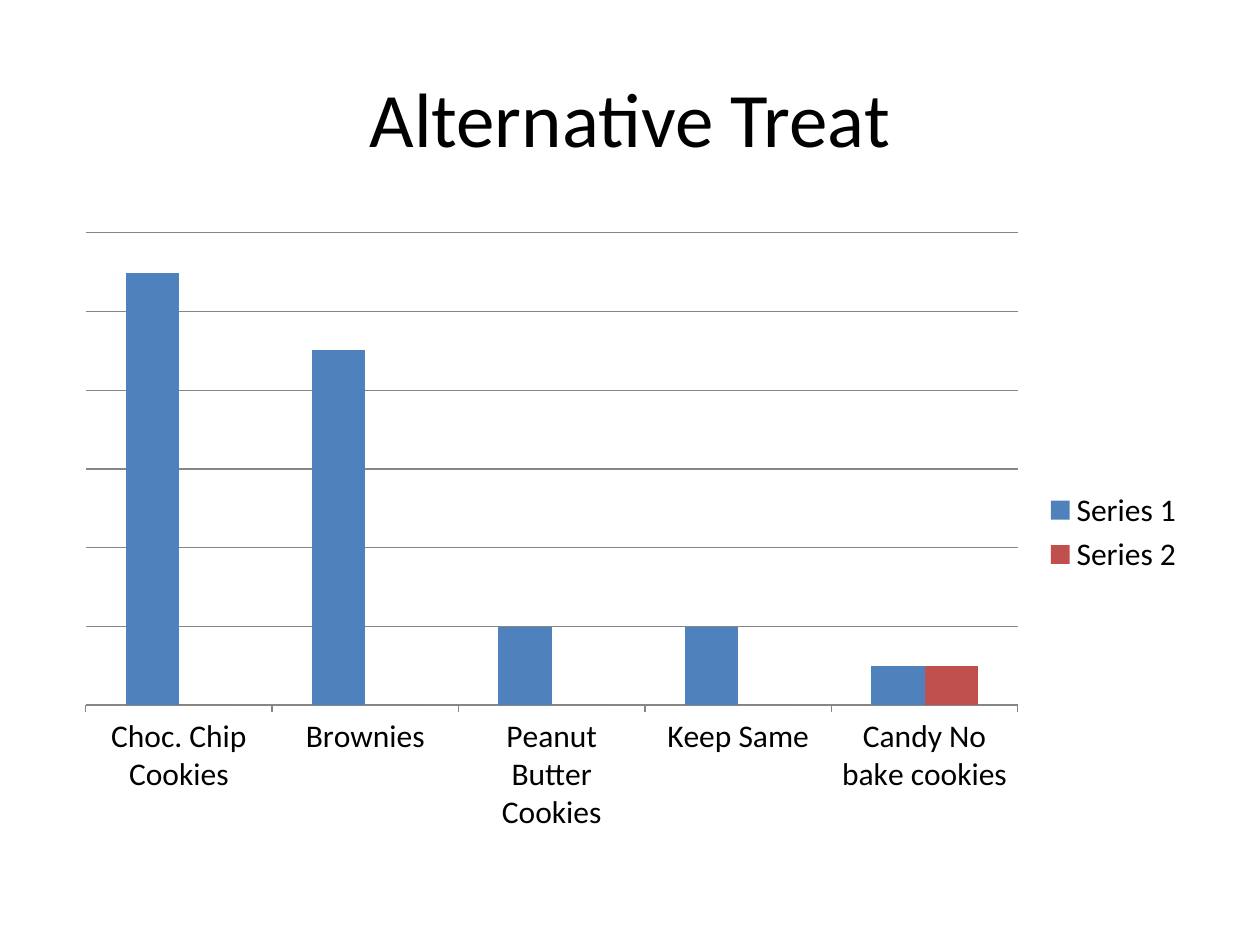
from dataclasses import dataclass

from pptx import Presentation
from pptx import util as u
from pptx.chart import data as cd
from pptx.dml.color import RGBColor
from pptx.enum import chart as ce
from pptx.enum import text as te


@dataclass(frozen=True)
class Theme:
    face: str = "Calibri"
    ink: str = "000000"
    rule: str = "868686"
    bars: tuple = ("4F81BD", "C0504D")
    head: int = 44
    body: int = 18


def put(item, form):
    for name, value in form.items():
        setattr(item, name, value)


class Deck:
    def __init__(self, theme, wide, high):
        self.theme = theme
        self.file = Presentation()
        put(self.file, {"slide_width": u.Pt(wide), "slide_height": u.Pt(high)})
        self.slide = self.file.slides.add_slide(self.file.slide_layouts[6])

    def font(self, font, size):
        put(font, {"name": self.theme.face, "size": u.Pt(size), "bold": False})
        font.color.rgb = RGBColor.from_string(self.theme.ink)

    def line(self, form):
        form.line.width = u.Pt(0.75)
        form.line.color.rgb = RGBColor.from_string(self.theme.rule)

    def title(self, words, *box):
        frame = self.slide.shapes.add_textbox(*map(u.Pt, box)).text_frame
        put(frame, {"word_wrap": True, "vertical_anchor": te.MSO_ANCHOR.MIDDLE})
        para = frame.paragraphs[0]
        put(para, {"text": words, "alignment": te.PP_ALIGN.CENTER})
        self.font(para.runs[0].font, self.theme.head)

    def chart(self, cats, rows, step, *box):
        data = cd.CategoryChartData()
        data.categories = cats
        for name, vals in rows.items():
            data.add_series(name, vals)
        kind = ce.XL_CHART_TYPE.COLUMN_CLUSTERED
        chart = self.slide.shapes.add_chart(kind, *map(u.Pt, box), data).chart
        put(chart, {"has_title": False, "has_legend": True})
        self.font(chart.font, self.theme.body)
        put(chart.legend, {"position": ce.XL_LEGEND_POSITION.RIGHT,
                           "include_in_layout": False})
        plot = chart.plots[0]
        put(plot, {"gap_width": 150, "overlap": 0, "vary_by_categories": False})
        for row, tint in zip(plot.series, self.theme.bars):
            row.invert_if_negative = False
            row.format.fill.solid()
            row.format.fill.fore_color.rgb = RGBColor.from_string(tint)
        base, scale = chart.category_axis, chart.value_axis
        put(base, {"major_tick_mark": ce.XL_TICK_MARK.OUTSIDE,
                   "has_major_gridlines": False})
        put(scale, {"visible": False, "has_major_gridlines": True,
                    "minimum_scale": 0, "maximum_scale": 6 * step,
                    "major_unit": step})
        self.line(base.format)
        self.line(scale.major_gridlines.format)


def main():
    deck = Deck(Theme(), 720, 540)
    deck.title("Alternative Treat", 36, 21.6, 648, 90)
    cats = ["Choc. Chip Cookies", "Brownies", "Peanut Butter Cookies",
            "Keep Same", "Candy No bake cookies"]
    rows = {"Series 1": (100, 82, 18, 18, 9), "Series 2": (0, 0, 0, 0, 9)}
    deck.chart(cats, rows, 18.2, 36, 126, 648, 356.4)
    deck.file.save("out.pptx")


if __name__ == "__main__":
    main()
